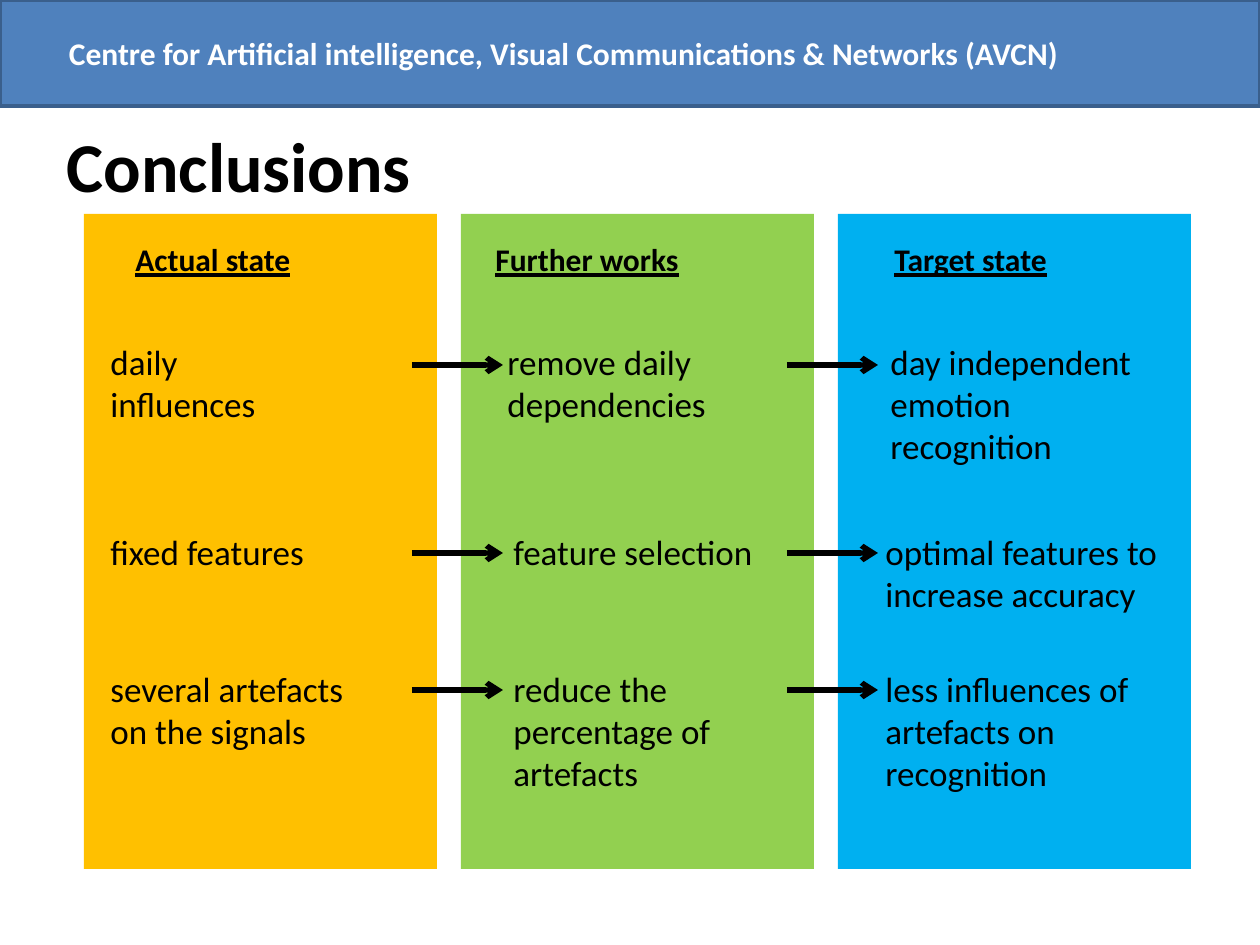
from lxml import etree
from pptx import Presentation
from pptx import util as u
from pptx.dml.color import RGBColor
from pptx.enum import shapes, text
from pptx.oxml.ns import qn

BLACK = RGBColor(0x00, 0x00, 0x00)
WHITE = RGBColor(0xFF, 0xFF, 0xFF)
BLUE = RGBColor(0x4F, 0x81, 0xBD)
DARK_BLUE = RGBColor(0x3A, 0x5F, 0x8C)
ORANGE = RGBColor(0xFF, 0xC0, 0x00)
GREEN = RGBColor(0x92, 0xD0, 0x50)
CYAN = RGBColor(0x00, 0xB0, 0xF0)

BANNER = "Centre for Artificial intelligence, Visual Communications & Networks (AVCN)"
TITLE = "Conclusions"
COLUMNS = [
    ("Actual state", ORANGE, 123, 181),
    ("Further works", GREEN, 483, 307),
    ("Target state", CYAN, 882, 263),
]
ROWS = [
    (334, 365, [("daily\ninfluences", 98, 190, 2),
                ("remove daily dependencies", 495, 295, 2),
                ("day independent emotion recognition", 878, 295, 3)]),
    (524, 553, [("fixed features", 98, 237, 1),
                ("feature selection", 501, 285, 1),
                ("optimal features to increase accuracy", 873, 333, 2)]),
    (661, 690, [("several artefacts on the signals", 98, 294, 2),
                ("reduce the percentage of artefacts", 501, 285, 3),
                ("less influences of artefacts on recognition", 873, 273, 3)]),
]

COLUMN_LEFT, COLUMN_TOP, COLUMN_WIDTH, COLUMN_HEIGHT, COLUMN_STEP = 84, 214, 353, 655, 377
ARROW_LEFT, ARROW_LENGTH, ARROW_STEP = 412, 91, 375
HEADING_TOP, HEADING_HEIGHT = 234, 55
LINE_HEIGHT, INSETS = 42, 13


def px(value):
    return u.Emu(round(value * 914400 / 126))


def style(frame, size, color=BLACK, bold=False, underline=False):
    for paragraph in frame.paragraphs:
        paragraph.alignment = text.PP_ALIGN.LEFT
        for run in paragraph.runs:
            font = run.font
            font.name, font.size = "Calibri", u.Pt(size)
            font.bold, font.underline = bold, underline
            font.color.rgb = color


def add_block(slide, left, top, width, height, fill):
    shape = slide.shapes.add_shape(
        shapes.MSO_SHAPE.RECTANGLE, px(left), px(top), px(width), px(height))
    shape.shadow.inherit = False
    shape.fill.solid()
    shape.fill.fore_color.rgb = fill
    shape.line.fill.background()
    return shape


def add_text(slide, words, left, top, width, height, size, **look):
    box = slide.shapes.add_textbox(px(left), px(top), px(width), px(height))
    box.text_frame.word_wrap = True
    box.text_frame.text = words
    style(box.text_frame, size, **look)


def add_arrow(slide, left, y):
    arrow = slide.shapes.add_connector(
        shapes.MSO_CONNECTOR.STRAIGHT, px(left), px(y), px(left + ARROW_LENGTH), px(y))
    arrow.line.color.rgb = BLACK
    arrow.line.width = u.Pt(3)
    etree.SubElement(arrow.line._get_or_add_ln(), qn("a:tailEnd"), type="arrow")
    etree.SubElement(arrow._element.spPr, qn("a:effectLst"))


def main():
    presentation = Presentation()
    presentation.slide_width, presentation.slide_height = px(1260), px(945)
    slide = presentation.slides.add_slide(presentation.slide_layouts[5])

    banner = add_block(slide, 0, 0, 1260, 106, BLUE)
    banner.line.color.rgb = DARK_BLUE
    banner.line.width = u.Pt(2)
    banner.text_frame.margin_left = px(69)
    banner.text_frame.vertical_anchor = text.MSO_ANCHOR.MIDDLE
    banner.text_frame.text = BANNER
    style(banner.text_frame, 18, WHITE, bold=True)

    title = slide.shapes.title
    title.left, title.top, title.width, title.height = px(54), px(116), px(1191), px(97)
    title.text_frame.text = TITLE
    title.text_frame.vertical_anchor = text.MSO_ANCHOR.TOP
    style(title.text_frame, 40, bold=True)

    for index, (heading, fill, left, width) in enumerate(COLUMNS):
        add_block(slide, COLUMN_LEFT + index * COLUMN_STEP, COLUMN_TOP,
                  COLUMN_WIDTH, COLUMN_HEIGHT, fill)
        add_text(slide, heading, left, HEADING_TOP, width, HEADING_HEIGHT, 18,
                 bold=True, underline=True)

    for top, arrow_y, cells in ROWS:
        for index in range(len(cells) - 1):
            add_arrow(slide, ARROW_LEFT + index * ARROW_STEP, arrow_y)
        for words, left, width, lines in cells:
            add_text(slide, words, left, top, width, lines * LINE_HEIGHT + INSETS, 20)

    presentation.save("out.pptx")


if __name__ == "__main__":
    main()
